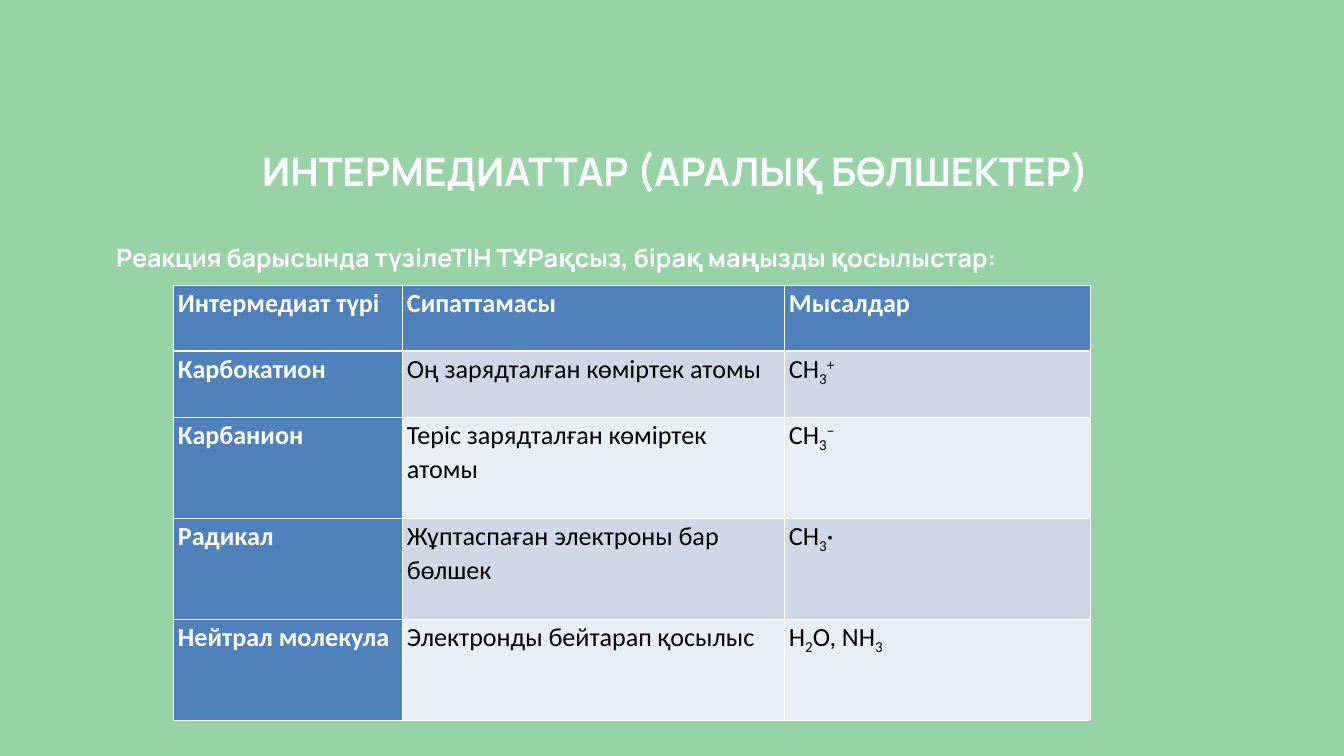
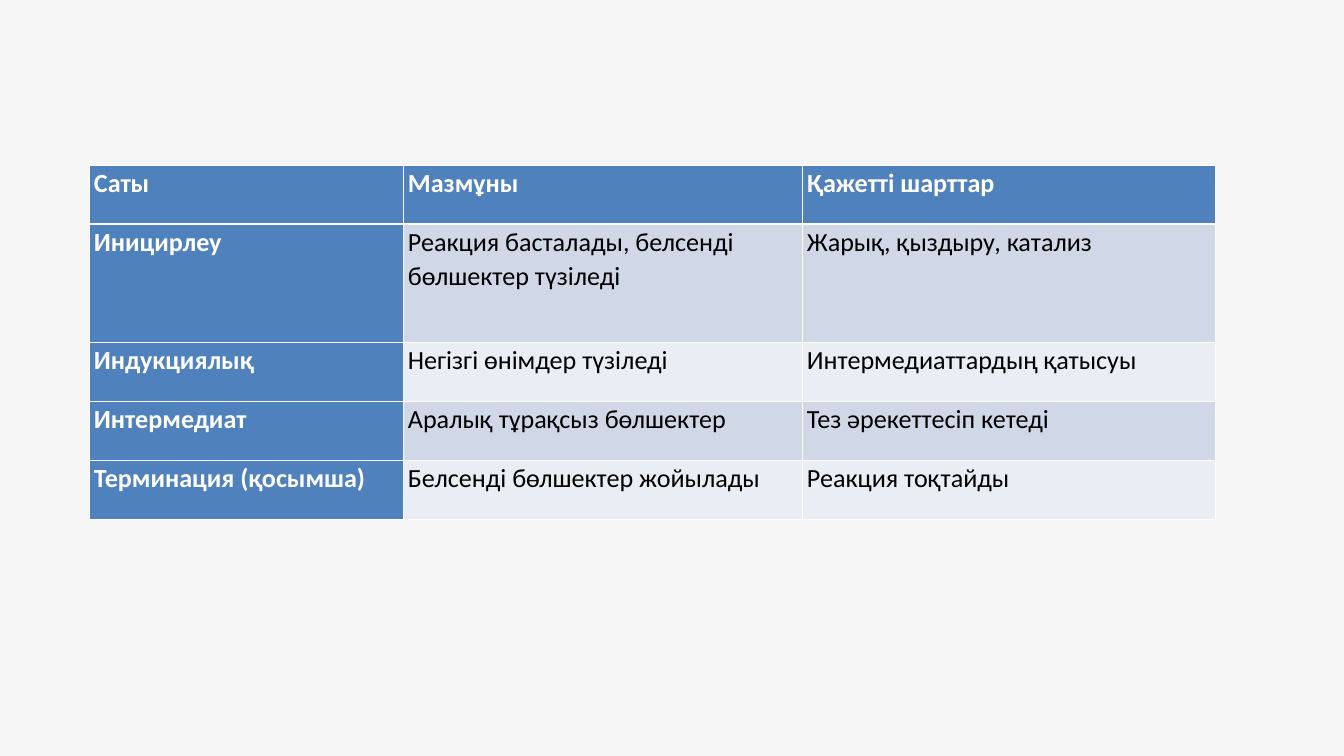
import lxml.etree
import pptx
import pptx.dml.color
import pptx.enum.text
import pptx.oxml.ns
import pptx.util

EMU_PER_PX = 914400 / 67.2
WHITE, BLACK = "FFFFFF", "000000"
GREEN, PALE_GREY = "97D3A5", "F6F5F5"
HEADER_BLUE = "4F81BD"
BANDS = ("E9EDF4", "D0D8E8")
BASELINES = {"_": "-25000", "^": "30000"}
HEADING_LAYOUT, BLANK_LAYOUT = 1, 6


def px(length):
    return pptx.util.Emu(round(length * EMU_PER_PX))


def color(hex_string):
    return pptx.dml.color.RGBColor.from_string(hex_string)


def apply(target, values):
    for name, value in values.items():
        setattr(target, name, value)


def split_scripts(formula):
    parts, baseline = [], None
    for symbol in formula:
        if symbol in BASELINES:
            baseline = BASELINES[symbol]
        elif baseline or not parts or parts[-1][1]:
            parts.append((symbol, baseline))
            baseline = None
        else:
            parts[-1] = (parts[-1][0] + symbol, None)
    return parts


class Deck:
    heading_font = {"name": "Manrope", "bold": True}
    cell_font = {"name": "Calibri", "size": pptx.util.Pt(28)}
    heading_frame = {
        "margin_left": 0, "margin_right": 0, "margin_top": 0, "margin_bottom": 0,
        "word_wrap": True,
        "vertical_anchor": pptx.enum.text.MSO_ANCHOR.TOP,
        "auto_size": pptx.enum.text.MSO_AUTO_SIZE.SHAPE_TO_FIT_TEXT,
    }
    cell_margins = {"margin_left": px(5), "margin_right": px(5),
                    "margin_top": 0, "margin_bottom": 0}

    def __init__(self, width, height):
        self.presentation = pptx.Presentation()
        apply(self.presentation, {"slide_width": px(width), "slide_height": px(height)})
        self.slide = None

    def add_slide(self, layout, background):
        self.slide = self.presentation.slides.add_slide(
            self.presentation.slide_layouts[layout])
        fill = self.slide.background.fill
        fill.solid()
        fill.fore_color.rgb = color(background)

    def heading(self, index, text, box, size, line_height, alignment):
        placeholder = self.slide.placeholders[index]
        apply(placeholder, dict(zip(("left", "top", "width", "height"), map(px, box))))
        apply(placeholder.text_frame, self.heading_frame)
        paragraph = placeholder.text_frame.paragraphs[0]
        apply(paragraph, {"alignment": alignment, "space_before": pptx.util.Pt(0),
                          "line_spacing": pptx.util.Pt(line_height)})
        properties = paragraph._p.get_or_add_pPr()
        properties.set("marL", "0")
        properties.set("indent", "0")
        lxml.etree.SubElement(properties, pptx.oxml.ns.qn("a:buNone"))
        run = paragraph.add_run()
        run.text = text
        apply(run.font, self.heading_font)
        run.font.size = pptx.util.Pt(size)
        run.font.color.rgb = color(WHITE)

    def table(self, left, top, column_widths, row_heights, content):
        table = self.slide.shapes.add_table(
            len(row_heights), len(column_widths), px(left), px(top),
            px(sum(column_widths)), px(sum(row_heights))).table
        table.first_col = True
        for column, width in zip(table.columns, column_widths):
            column.width = px(width)
        for row, height in zip(table.rows, row_heights):
            row.height = px(height)
        for row_number, texts in enumerate(content):
            for column_number, text in enumerate(texts):
                self.cell(table.cell(row_number, column_number), text,
                          row_number, column_number)

    def cell(self, cell, text, row_number, column_number):
        is_header = row_number == 0 or column_number == 0
        apply(cell, self.cell_margins)
        cell.fill.solid()
        cell.fill.fore_color.rgb = color(HEADER_BLUE if is_header else BANDS[row_number % 2])
        self.borders(cell, 3 if row_number == 0 else 1)
        paragraph = cell.text_frame.paragraphs[0]
        paragraph.line_spacing = 1.07
        for part, baseline in split_scripts(text):
            run = paragraph.add_run()
            run.text = part
            apply(run.font, self.cell_font)
            run.font.bold = is_header
            run.font.color.rgb = color(WHITE if is_header else BLACK)
            if baseline:
                run._r.get_or_add_rPr().set("baseline", baseline)

    def borders(self, cell, bottom_width):
        qn = pptx.oxml.ns.qn
        properties = cell._tc.get_or_add_tcPr()
        widths = {"a:lnL": 1, "a:lnR": 1, "a:lnT": 1, "a:lnB": bottom_width}
        for position, (side, width) in enumerate(widths.items()):
            line = lxml.etree.Element(qn(side), w=str(pptx.util.Pt(width)))
            fill = lxml.etree.SubElement(line, qn("a:solidFill"))
            lxml.etree.SubElement(fill, qn("a:srgbClr"), val=WHITE)
            properties.insert(position, line)


INTERMEDIATES = [
    ("Интермедиат түрі", "Сипаттамасы", "Мысалдар"),
    ("Карбокатион", "Оң зарядталған көміртек атомы", "CH_3^+"),
    ("Карбанион", "Теріс зарядталған көміртек атомы", "CH_3^−"),
    ("Радикал", "Жұптаспаған электроны бар бөлшек", "CH_3·"),
    ("Нейтрал молекула", "Электронды бейтарап қосылыс", "H_2O, NH_3"),
]

STAGES = [
    ("Саты", "Мазмұны", "Қажетті шарттар"),
    ("Иницирлеу", "Реакция басталады, белсенді бөлшектер түзіледі",
     "Жарық, қыздыру, катализ"),
    ("Индукциялық", "Негізгі өнімдер түзіледі", "Интермедиаттардың қатысуы"),
    ("Интермедиат", "Аралық тұрақсыз бөлшектер", "Тез әрекеттесіп кетеді"),
    ("Терминация (қосымша)", "Белсенді бөлшектер жойылады", "Реакция тоқтайды"),
]


def main():
    align = pptx.enum.text.PP_ALIGN
    deck = Deck(1344, 756)

    deck.add_slide(HEADING_LAYOUT, GREEN)
    deck.heading(0, " ИНТЕРМЕДИАТТАР (АРАЛЫҚ БӨЛШЕКТЕР)",
                 (253, 139, 837, 53), 42, 58.8, align.CENTER)
    deck.heading(1, " Реакция барысында түзілеТІН ТҰРақсыз, бірақ маңызды қосылыстар:",
                 (111, 237, 1157, 69), 27, 37.8, align.LEFT)
    deck.table(173, 285, (229, 382, 306), [66] * 2 + [101] * 3, INTERMEDIATES)

    deck.add_slide(BLANK_LAYOUT, PALE_GREY)
    stage_height = 59
    deck.table(89, 165, (314, 399, 413),
               [stage_height, 2 * stage_height] + [stage_height] * 3, STAGES)

    deck.presentation.save("out.pptx")


if __name__ == "__main__":
    main()
